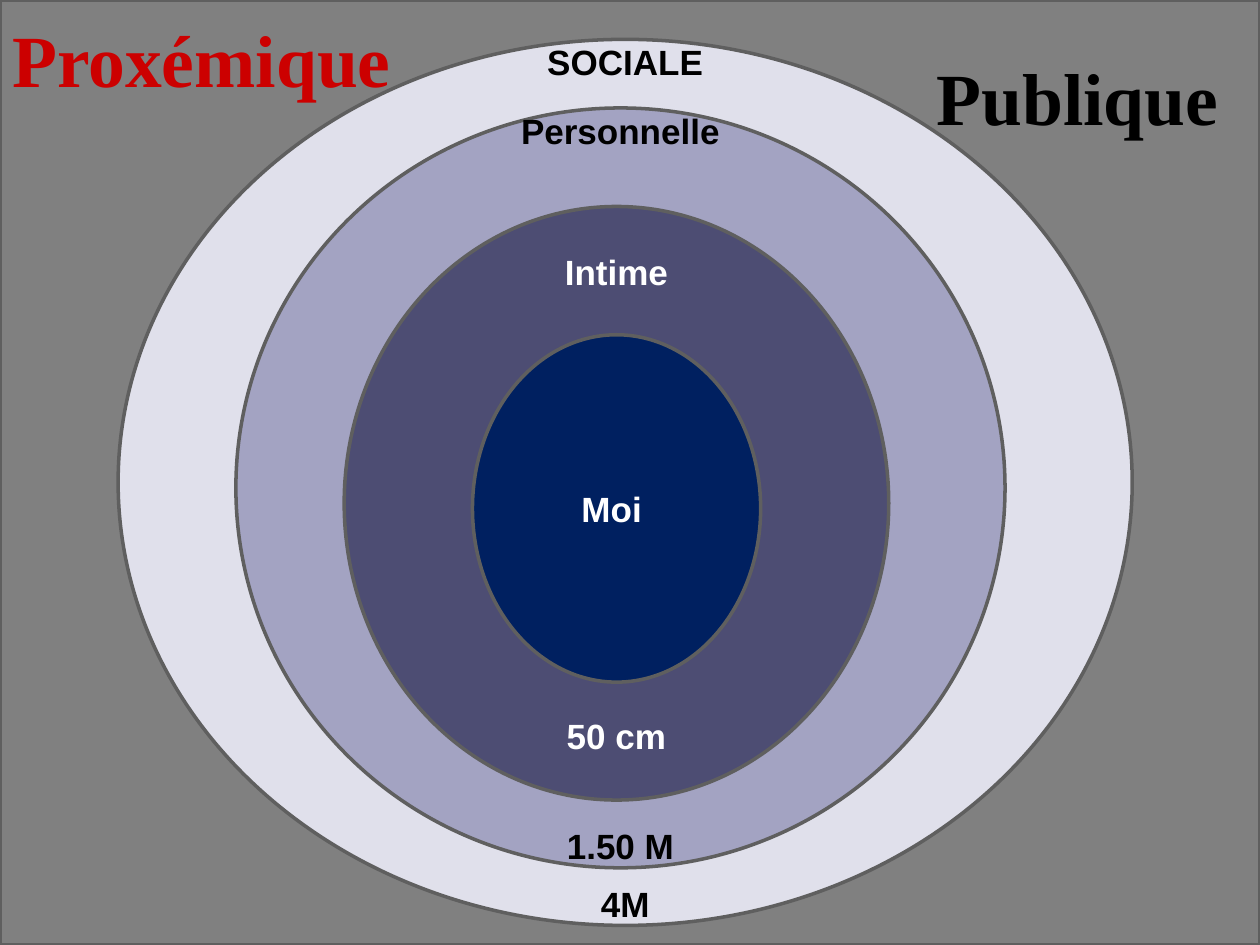
from dataclasses import dataclass

from pptx import Presentation
from pptx.dml.color import RGBColor as RGB
from pptx.enum.shapes import MSO_SHAPE as Shape
from pptx.enum.text import MSO_ANCHOR as Anchor, MSO_AUTO_SIZE as AutoSize, PP_ALIGN as Align
from pptx.util import Pt


@dataclass(frozen=True)
class Theme:
    """Colours, fonts and sizes of the slide."""
    public: str = "808080"
    social: str = "E0E0EB"
    personal: str = "A3A3C2"
    intimate: str = "4D4D73"
    me: str = "002060"
    line: str = "5F5F5F"
    dark: str = "000000"
    light: str = "FFFFFF"
    accent: str = "CC0000"
    head_font: str = "Times New Roman"
    label_font: str = "Arial"
    head_size: float = 42
    label_size: float = 20
    line_width: float = 2
    head_inset: float = 8.2


@dataclass(frozen=True)
class Box:
    """A rectangle in points."""
    left: float
    top: float
    width: float
    height: float

    def lengths(self):
        """Return the four values as lengths."""
        return [Pt(v) for v in (self.left, self.top, self.width, self.height)]


@dataclass(frozen=True)
class Zone:
    """One ellipse with its labels and the gap between them."""
    box: Box
    fill: str
    color: str
    labels: tuple[str, ...]
    gap: float = 0


THEME = Theme()
SLIDE = Box(0, 0, 720, 540)
TITLE = Box(55.4, 21.6, 648, 90)
TOPIC = Box(0, 0, 292.3, 90)
ZONES = (
    Zone(Box(67.5, 22.5, 579.5, 506.3), THEME.social, THEME.dark, ("SOCIALE", "4M"), 457),
    Zone(Box(134.8, 61.7, 439.5, 434.2), THEME.personal, THEME.dark, ("Personnelle", "1.50 M"), 385),
    Zone(Box(196.7, 118, 311.2, 339.2), THEME.intimate, THEME.light, ("Intime", "50 cm"), 241),
    Zone(Box(270, 191.3, 164.7, 198.5), THEME.me, THEME.light, ("Moi ",)),
)


def write(tf, *texts: str, font: str, size: float, color: str,
          align=Align.LEFT, anchor=Anchor.TOP, gap: float = 0) -> None:
    """Write bold paragraphs set apart by a gap."""
    tf.word_wrap = True
    tf.auto_size = AutoSize.NONE
    tf.vertical_anchor = anchor
    for i, text in enumerate(texts):
        p = tf.add_paragraph() if i else tf.paragraphs[0]
        p.alignment = align
        if i:
            p.space_before = Pt(gap)
        r = p.add_run()
        r.text = text
        r.font.name, r.font.size, r.font.bold = font, Pt(size), True
        r.font.color.rgb = RGB.from_string(color)


def heading(tf, text: str, color: str, align=Align.LEFT) -> None:
    """Write a large heading."""
    tf.margin_top = Pt(THEME.head_inset)
    write(tf, text, font=THEME.head_font, size=THEME.head_size, color=color, align=align)


def area(s, kind, box: Box, fill: str):
    """Draw an outlined area and return it."""
    sp = s.shapes.add_shape(kind, *box.lengths())
    sp.shadow.inherit = False
    sp.fill.solid()
    sp.fill.fore_color.rgb = RGB.from_string(fill)
    sp.line.color.rgb = RGB.from_string(THEME.line)
    sp.line.width = Pt(THEME.line_width)
    return sp


def draw_zone(s, zone: Zone) -> None:
    """Draw one distance zone with its labels."""
    sp = area(s, Shape.OVAL, zone.box, zone.fill)
    write(sp.text_frame, *zone.labels, font=THEME.label_font, size=THEME.label_size,
          color=zone.color, align=Align.CENTER, anchor=Anchor.MIDDLE, gap=zone.gap)


def main() -> None:
    """Build and save the slide."""
    prs = Presentation()
    prs.slide_width, prs.slide_height = Pt(SLIDE.width), Pt(SLIDE.height)
    s = prs.slides.add_slide(prs.slide_layouts[5])
    title = s.shapes.title
    title.left, title.top, title.width, title.height = TITLE.lengths()
    heading(title.text_frame, "Publique", THEME.dark, Align.RIGHT)
    public = area(s, Shape.RECTANGLE, SLIDE, THEME.public)
    title.element.addprevious(public.element)
    for zone in ZONES:
        draw_zone(s, zone)
    topic = s.shapes.add_textbox(*TOPIC.lengths())
    heading(topic.text_frame, "Proxémique", THEME.accent)
    prs.save("out.pptx")


if __name__ == "__main__":
    main()
